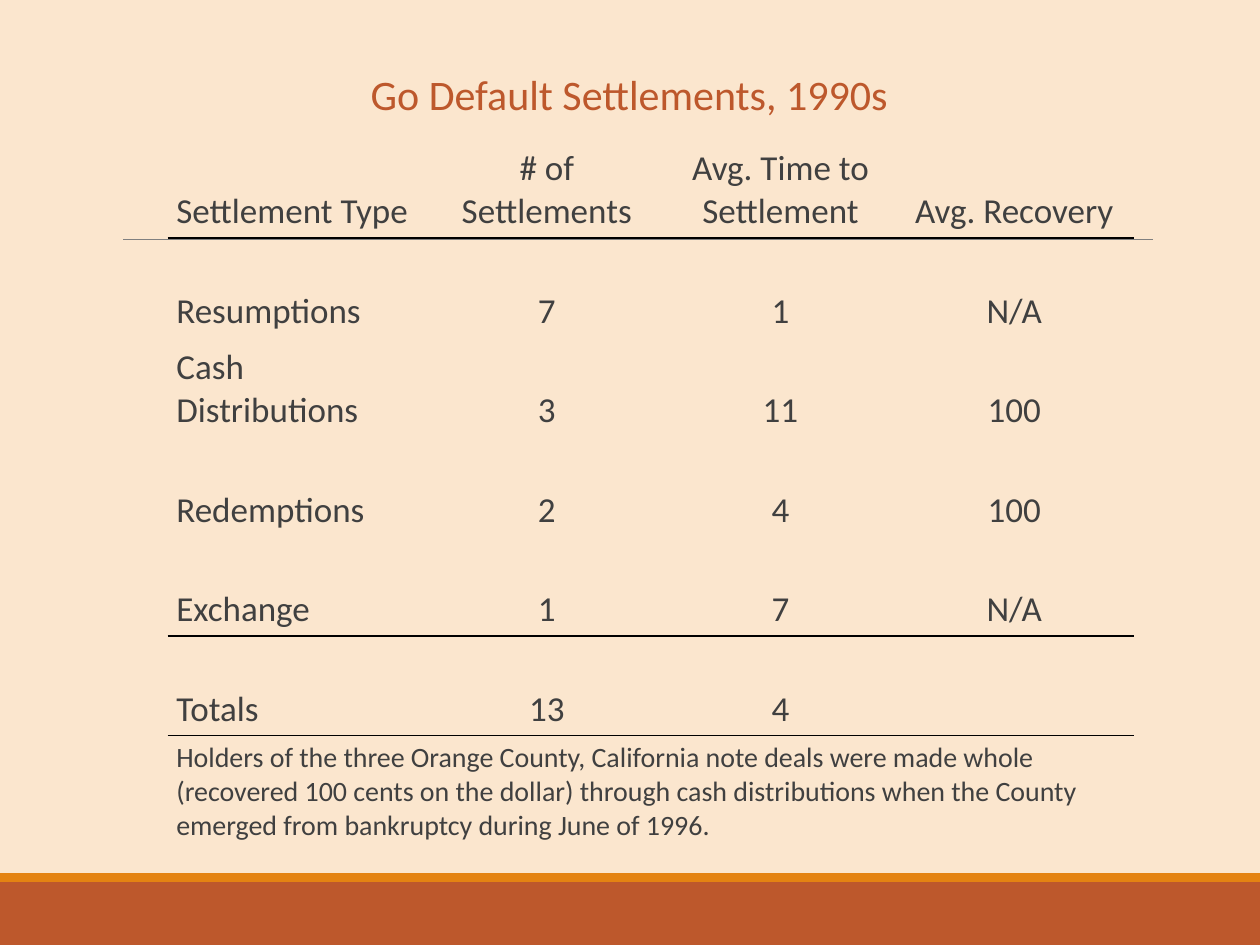
from lxml import etree
from pptx import Presentation
from pptx.dml.color import RGBColor
from pptx.enum.shapes import MSO_CONNECTOR, MSO_SHAPE
from pptx.enum.text import MSO_ANCHOR, PP_ALIGN
from pptx.oxml import parse_xml
from pptx.oxml.ns import nsdecls, qn
from pptx.util import Inches, Pt

CREAM = RGBColor(0xFB, 0xE6, 0xCE)
RUST = RGBColor(0xBD, 0x58, 0x2C)
ORANGE = RGBColor(0xE4, 0x83, 0x12)
GRAY = RGBColor(0x80, 0x80, 0x80)
DARK = RGBColor(0x40, 0x40, 0x40)
LEFT, CENTER = PP_ALIGN.LEFT, PP_ALIGN.CENTER
TOP, BOTTOM = MSO_ANCHOR.TOP, MSO_ANCHOR.BOTTOM
RECTANGLE = MSO_SHAPE.RECTANGLE
STRAIGHT = MSO_CONNECTOR.STRAIGHT

ROWS = [
    ["Settlement Type", "# of Settlements", "Avg. Time to Settlement", "Avg. Recovery"],
    ["Resumptions", "7", "1", "N/A"],
    ["Cash Distributions", "3", "11", "100"],
    ["Redemptions", "2", "4", "100"],
    ["Exchange", "1", "7", "N/A"],
    ["Totals", "13", "4", ""],
    ["Holders of the three Orange County, California note deals were made whole "
     "(recovered 100 cents on the dollar) through cash distributions when the County "
     "emerged from bankruptcy during June of 1996.", "", "", ""],
]
NOTE_ROW = len(ROWS) - 1
RULED_ROWS = {0, 4, 5}
COL_WIDTHS = [2.06, 1.9, 1.81, 1.9]
ROW_HEIGHTS = [0.81] + [0.79] * 5 + [0.89]


def write(tf, text, size, color, align):
    p = tf.paragraphs[0]
    p.alignment = align
    r = p.add_run()
    r.text = text
    r.font.color.rgb = color
    for name, value in {"name": "Calibri", "size": Pt(size), "bold": False}.items():
        setattr(r.font, name, value)
    return p


def set_borders(cell, top, bottom):
    tcPr = cell._tc.get_or_add_tcPr()
    sides = {"lnL": False, "lnR": False, "lnT": top, "lnB": bottom}
    for i, (side, ruled) in enumerate(sides.items()):
        fill = '<a:solidFill><a:srgbClr val="000000"/></a:solidFill>' if ruled else "<a:noFill/>"
        tcPr.insert(i, parse_xml(f'<a:{side} {nsdecls("a")} w="{Pt(1)}">{fill}</a:{side}>'))


prs = Presentation()
prs.slide_width, prs.slide_height = Inches(10), Inches(7.5)
s = prs.slides.add_slide(prs.slide_layouts[6])
s.background.fill.solid()
s.background.fill.fore_color.rgb = CREAM

for top, height, color in [(7, 0.5, RUST), (6.93, 0.07, ORANGE)]:
    sp = s.shapes.add_shape(RECTANGLE, 0, Inches(top), Inches(10), Inches(height))
    sp.shadow.inherit = False
    sp.fill.solid()
    sp.fill.fore_color.rgb = color
    sp.line.fill.background()

rule = s.shapes.add_connector(STRAIGHT, Inches(0.98), Inches(1.9), Inches(9.15), Inches(1.9))
rule.line.color.rgb = GRAY
rule.line.width = Pt(0.5)
etree.SubElement(rule._element.spPr, qn("a:effectLst"))

title = s.shapes.add_textbox(Inches(1.33), Inches(0.57), Inches(7.33), Inches(0.43))
title.text_frame.word_wrap = True
p = write(title.text_frame, "Go Default Settlements, 1990s", 24, RUST, CENTER)
p.line_spacing = 0.8
p.space_before = Pt(4.8)

frame = s.shapes.add_table(len(ROWS), len(COL_WIDTHS), Inches(1.33), Inches(1.08),
                           Inches(sum(COL_WIDTHS)), Inches(sum(ROW_HEIGHTS)))
table = frame.table
table.first_row = table.horz_banding = False
for column, width in zip(table.columns, COL_WIDTHS):
    column.width = Inches(width)
for row, height in zip(table.rows, ROW_HEIGHTS):
    row.height = Inches(height)
table.cell(NOTE_ROW, 0).merge(table.cell(NOTE_ROW, len(COL_WIDTHS) - 1))

for i, texts in enumerate(ROWS):
    for j, text in enumerate(texts):
        cell = table.cell(i, j)
        cell.fill.background()
        set_borders(cell, i - 1 in RULED_ROWS, i in RULED_ROWS)
        layout = {"vertical_anchor": TOP if i == NOTE_ROW else BOTTOM,
                  "margin_left": Inches(0.07), "margin_right": Inches(0.07),
                  "margin_top": Inches(0.04), "margin_bottom": Inches(0.04)}
        for name, value in layout.items():
            setattr(cell, name, value)
        if text:
            write(cell.text_frame, text, 16 if i == NOTE_ROW else 20, DARK, CENTER if j else LEFT)

prs.save("out.pptx")
